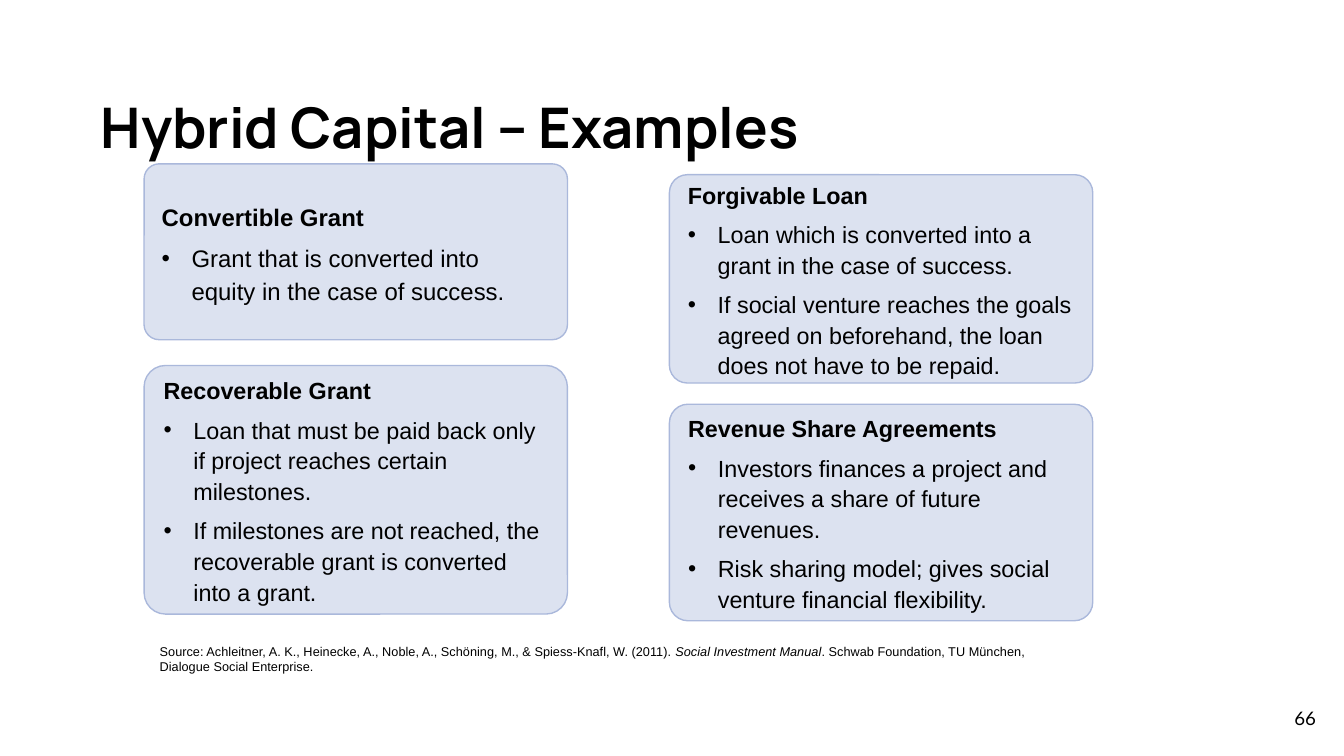
from lxml import etree
from pptx import Presentation
from pptx.dml.color import RGBColor
from pptx.enum.shapes import MSO_SHAPE
from pptx.enum.text import MSO_ANCHOR, PP_ALIGN
from pptx.oxml.ns import qn
from pptx.util import Pt

ROUNDED = MSO_SHAPE.ROUNDED_RECTANGLE
TOP, MIDDLE = MSO_ANCHOR.TOP, MSO_ANCHOR.MIDDLE
LEFT, RIGHT = PP_ALIGN.LEFT, PP_ALIGN.RIGHT

BLACK = RGBColor(0x00, 0x00, 0x00)
CARD_FILL = RGBColor(0xDC, 0xE2, 0xF0)
CARD_LINE = RGBColor(0xAA, 0xB8, 0xDB)

CARD_WIDTH = 226.8
LEFT_COLUMN, RIGHT_COLUMN = 77.2, 358.6
BULLET_INDENT = 16

# left, top, height, text size, line spacing, heading, bullets
CARDS = [
    (LEFT_COLUMN, 87.8, 94.2, 12.8, 1.15, "Convertible Grant", [
        "Grant that is converted into equity in the case of success."]),
    (LEFT_COLUMN, 195.8, 133.2, 12.5, 1.1, "Recoverable Grant", [
        "Loan that must be paid back only if project reaches certain milestones.",
        "If milestones are not reached, the recoverable grant is converted into a grant."]),
    (RIGHT_COLUMN, 93.6, 111.6, 12.5, 1.1, "Forgivable Loan", [
        "Loan which is converted into a grant in the case of success.",
        "If social venture reaches the goals agreed on beforehand, the loan "
        "does not have to be repaid."]),
    (RIGHT_COLUMN, 216.6, 116, 12.5, 1.1, "Revenue Share Agreements", [
        "Investors finances a project and receives a share of future revenues.",
        "Risk sharing model; gives social venture financial flexibility."]),
]

# left, top, width, height, margins (side, top), anchor, alignment, font, size, bold, runs
TEXTS = [
    (54, 49.7, 527.8, 16.6, (0, 0), TOP, LEFT, "Manrope", 30, True,
     [("Hybrid Capital – Examples", False)]),
    (78.5, 341.3, 485.3, 31.7, (7.2, 3.6), TOP, LEFT, "Arial", 6.8, False, [
        ("Source: Achleitner, A. K., Heinecke, A., Noble, A., Schöning, M., "
         "& Spiess-Knafl, W. (2011). ", False),
        ("Social Investment Manual", True),
        (". Schwab Foundation, TU München, Dialogue Social Enterprise.", False)]),
    (668.9, 369.4, 43.2, 31, (7.2, 7.2), MIDDLE, RIGHT, "Lato", 10, False,
     [("66", False)]),
]


def add_span(para, text, font, size, bold=False, italic=False):
    span = para.add_run()
    span.text = text
    span.font.name = font
    span.font.size = Pt(size)
    span.font.bold = bold
    span.font.italic = italic
    span.font.color.rgb = BLACK


def set_bullet(para):
    """Give the paragraph a round bullet with a hanging indent."""
    props = para._p.get_or_add_pPr()
    props.set("marL", str(Pt(BULLET_INDENT)))
    props.set("indent", str(-Pt(BULLET_INDENT)))
    colour = etree.SubElement(props, qn("a:buClr"))
    etree.SubElement(colour, qn("a:srgbClr"), val=str(BLACK))
    etree.SubElement(props, qn("a:buFont"), typeface="Arial")
    etree.SubElement(props, qn("a:buChar"), char="•")


deck = Presentation()
deck.slide_width, deck.slide_height = Pt(720), Pt(405)
page = deck.slides.add_slide(deck.slide_layouts[6])

for left, top, height, size, spacing, heading, bullets in CARDS:
    card = page.shapes.add_shape(ROUNDED, Pt(left), Pt(top), Pt(CARD_WIDTH), Pt(height))
    card.adjustments[0] = 0.086
    card.shadow.inherit = False
    card.fill.solid()
    card.fill.fore_color.rgb = CARD_FILL
    card.line.color.rgb = CARD_LINE
    card.line.width = Pt(0.75)
    frame = card.text_frame
    frame.word_wrap = True
    frame.vertical_anchor = MIDDLE
    para = frame.paragraphs[0]
    para.alignment = LEFT
    para.line_spacing = spacing
    add_span(para, heading, "Arial", size, bold=True)
    for bullet in bullets:
        para = frame.add_paragraph()
        set_bullet(para)
        para.alignment = LEFT
        para.line_spacing = spacing
        para.space_before = Pt(4.5)
        add_span(para, bullet, "Arial", size)

for left, top, width, height, margins, anchor, alignment, font, size, bold, runs in TEXTS:
    box = page.shapes.add_textbox(Pt(left), Pt(top), Pt(width), Pt(height))
    frame = box.text_frame
    frame.word_wrap = True
    frame.vertical_anchor = anchor
    frame.margin_left = frame.margin_right = Pt(margins[0])
    frame.margin_top = frame.margin_bottom = Pt(margins[1])
    para = frame.paragraphs[0]
    para.alignment = alignment
    for text, italic in runs:
        add_span(para, text, font, size, bold, italic)

deck.save("out.pptx")
